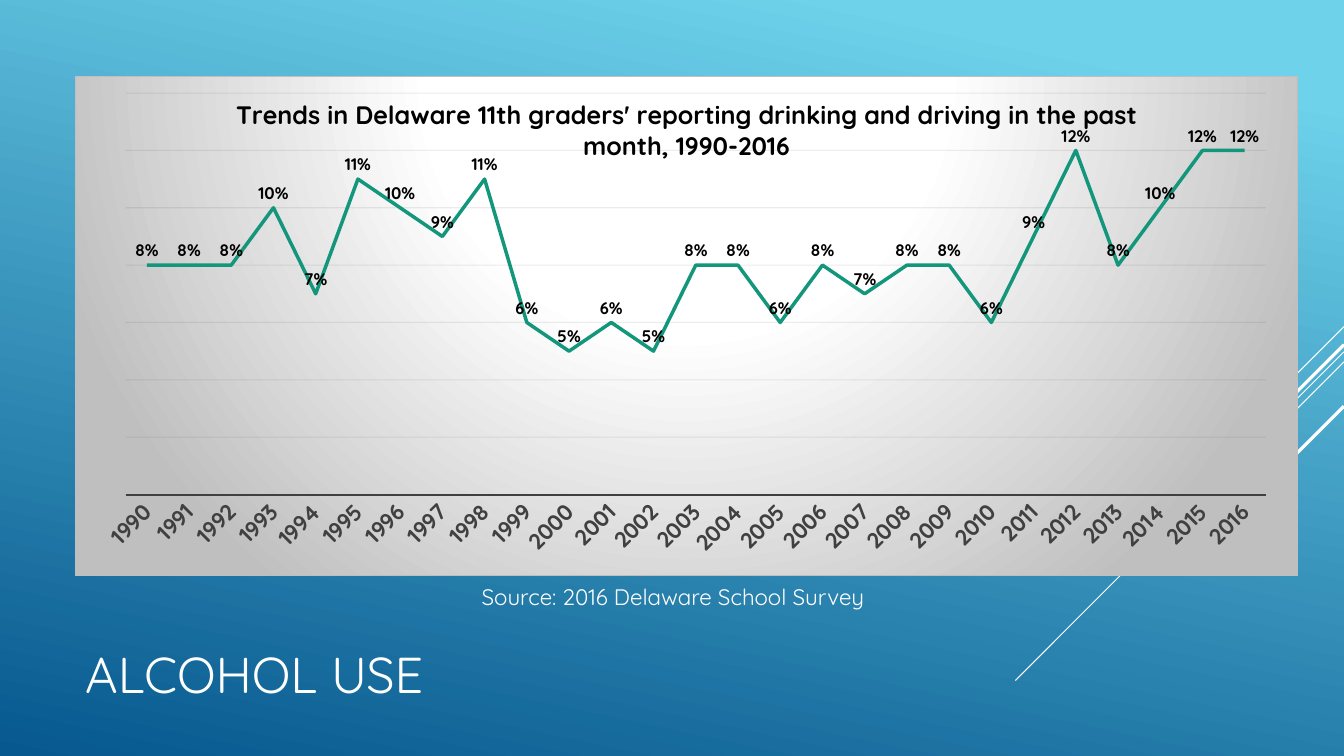
"""Build the alcohol use slide with its line chart of drinking and driving trends."""
import lxml.etree
import pptx
import pptx.chart.data
import pptx.dml.color
import pptx.enum.chart
import pptx.enum.shapes
import pptx.enum.text
import pptx.oxml
import pptx.oxml.ns
import pptx.util

Pt = pptx.util.Pt
qn = pptx.oxml.ns.qn
THEME = {
    "font": "Quicksand",
    "white": "FFFFFF", "black": "000000", "sky": "6ED2EB", "navy": "06588E",
    "green": "14967C", "axis": "404040", "grid": "0D0D0D", "silver": "BFBFBF",
    "title": 36, "chart_title": 18, "body": 16, "label": 12, "chart": 10,
}


def color(name):
    return pptx.dml.color.RGBColor.from_string(THEME[name])


def style_font(font, size, color_name, bold=False):
    font.name = THEME["font"]
    font.size = Pt(THEME[size])
    font.bold = bold
    font.color.rgb = color(color_name)


presentation = pptx.Presentation()
presentation.slide_width = Pt(960)
presentation.slide_height = Pt(540)
slide = presentation.slides.add_slide(presentation.slide_layouts[5])

background = slide.background.fill
background.gradient()
background.gradient_angle = 258
for stop, position, name in zip(background.gradient_stops, (0.1, 1), ("sky", "navy")):
    stop.position = position
    stop.color.rgb = color(name)

diagonals = [(233.3, 72, 0.75), (251.3, 234.7, 0.75), (258.5, 149, 0.75),
             (246.2, 137.5, 2.25), (290.2, 100, 2.25)]
for top, reach, width in diagonals:
    diagonal = slide.shapes.add_connector(
        pptx.enum.shapes.MSO_CONNECTOR.STRAIGHT,
        Pt(960), Pt(top), Pt(960 - reach), Pt(top + reach))
    diagonal.line.color.rgb = color("white")
    diagonal.line.width = Pt(width)
    lxml.etree.SubElement(diagonal._element.spPr, qn("a:effectLst"))

title = slide.shapes.title
title.left, title.top, title.width, title.height = Pt(53.7), Pt(421.6), Pt(811.5), Pt(119)
title.text_frame.text = "ALCOHOL USE"
title.text_frame.vertical_anchor = pptx.enum.text.MSO_ANCHOR.MIDDLE
title_paragraph = title.text_frame.paragraphs[0]
title_paragraph.alignment = pptx.enum.text.PP_ALIGN.LEFT
style_font(title_paragraph.runs[0].font, "title", "white")

percents = [8, 8, 8, 10, 7, 11, 10, 9, 11, 6, 5, 6, 5, 8, 8, 6, 8, 7, 8, 8, 6,
            9, 12, 8, 10, 12, 12]
chart_data = pptx.chart.data.CategoryChartData(number_format="0%")
chart_data.categories = [str(year) for year in range(1990, 2017)]
chart_data.add_series("Series 1", [percent / 100 for percent in percents])
chart = slide.shapes.add_chart(
    pptx.enum.chart.XL_CHART_TYPE.LINE, Pt(53.6), Pt(54), Pt(873.7), Pt(357.5), chart_data).chart
chart.has_legend = False
style_font(chart.font, "chart", "white")

chart.has_title = True
chart_title = chart.chart_title.text_frame
chart_title.text = ("Trends in Delaware 11th graders' reporting drinking and driving "
                    "in the past month, 1990-2016")
style_font(chart_title.paragraphs[0].runs[0].font, "chart_title", "black", True)

category_axis = chart.category_axis
category_axis.major_tick_mark = pptx.enum.chart.XL_TICK_MARK.NONE
category_axis.format.line.color.rgb = color("axis")
category_axis.format.line.width = Pt(1.5)
style_font(category_axis.tick_labels.font, "body", "axis", True)
category_axis._element.find(qn("c:txPr")).find(qn("a:bodyPr")).set("rot", "-2700000")

value_axis = chart.value_axis
value_axis.visible = False
value_axis.minimum_scale = 0
value_axis.maximum_scale = 0.14
value_axis.major_unit = 0.02
gridline = value_axis.major_gridlines.format.line
gridline.color.rgb = color("grid")
gridline.width = Pt(0.75)
for grid_color in value_axis._element.find(qn("c:majorGridlines")).iter(qn("a:srgbClr")):
    lxml.etree.SubElement(grid_color, qn("a:alpha"), val="7000")

plot = chart.plots[0]
plot.vary_by_categories = False
series = plot.series[0]
series.smooth = False
series.marker.style = pptx.enum.chart.XL_MARKER_STYLE.NONE
series.format.line.color.rgb = color("green")
series.format.line.width = Pt(2.5)
labels = series.data_labels
labels.show_value = True
labels.number_format = "0%"
labels.number_format_is_linked = False
labels.position = pptx.enum.chart.XL_LABEL_POSITION.ABOVE
style_font(labels.font, "label", "black", True)

plot_area = chart._chartSpace.chart.plotArea
for old_layout in plot_area.findall(qn("c:layout")):
    plot_area.remove(old_layout)
layout = lxml.etree.Element(qn("c:layout"))
manual_layout = lxml.etree.SubElement(layout, qn("c:manualLayout"))
for tag, value in [("layoutTarget", "inner"), ("xMode", "edge"), ("yMode", "edge"),
                   ("x", "0.041"), ("y", "0.034"), ("w", "0.933"), ("h", "0.804")]:
    lxml.etree.SubElement(manual_layout, qn("c:" + tag), val=value)
plot_area.insert(0, layout)

stops = "".join(
    f'<a:gs pos="{position}"><a:srgbClr val="{THEME[name]}"/></a:gs>'
    for position, name in [(0, "white"), (39000, "white"), (100000, "silver")])
chart._chartSpace.chart.addnext(pptx.oxml.parse_xml(
    f'<c:spPr {pptx.oxml.ns.nsdecls("c", "a")}>'
    f'<a:gradFill><a:gsLst>{stops}</a:gsLst><a:path path="circle">'
    '<a:fillToRect l="50000" t="-80000" r="50000" b="180000"/></a:path></a:gradFill>'
    f'<a:ln w="9525"><a:solidFill><a:srgbClr val="{THEME["silver"]}"/></a:solidFill></a:ln>'
    '</c:spPr>'))

source = slide.shapes.add_textbox(Pt(337), Pt(394), Pt(307.5), Pt(65.5))
source.text_frame.word_wrap = False
source.text_frame.margin_top = Pt(22.2)
source.text_frame.text = "Source: 2016 Delaware School Survey"
style_font(source.text_frame.paragraphs[0].runs[0].font, "body", "white")

presentation.save("out.pptx")
